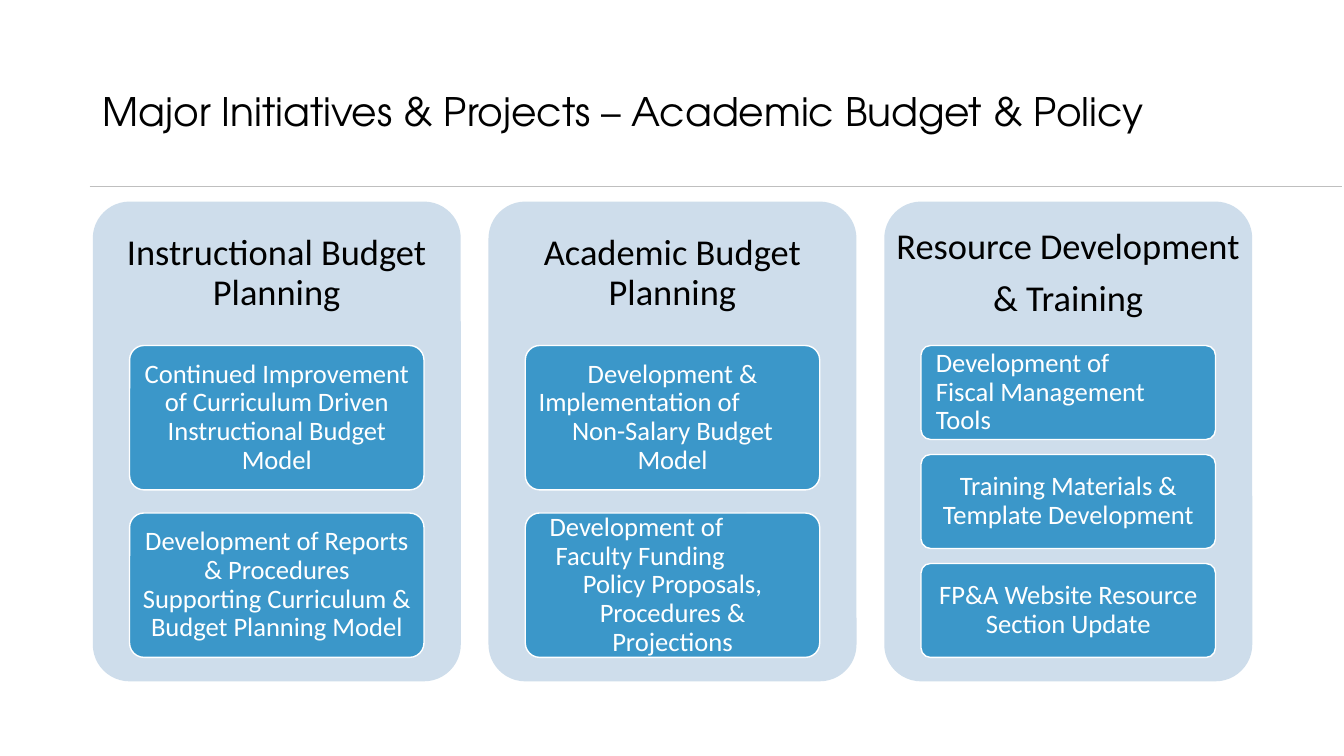
import pptx
import pptx.dml.color
import pptx.enum.shapes
import pptx.enum.text
import pptx.oxml
import pptx.util

Inches = pptx.util.Inches
Pt = pptx.util.Pt
RGBColor = pptx.dml.color.RGBColor
ALIGN = pptx.enum.text.PP_ALIGN
MIDDLE = pptx.enum.text.MSO_ANCHOR.MIDDLE

BLACK = RGBColor(0x00, 0x00, 0x00)
WHITE = RGBColor(0xFF, 0xFF, 0xFF)
RULE_GREY = RGBColor(0xBF, 0xBF, 0xBF)
PANEL_BLUE = RGBColor(0xCE, 0xDD, 0xEB)
CARD_BLUE = RGBColor(0x3B, 0x97, 0xC9)

TITLE = "Major Initiatives & Projects – Academic Budget & Policy"
COLUMNS = [
    (["Instructional Budget Planning"], [
        ["Continued Improvement of Curriculum Driven Instructional Budget Model"],
        ["Development of Reports & Procedures Supporting Curriculum & Budget Planning Model"],
    ]),
    (["Academic Budget Planning"], [
        ["Development &", ("Implementation of", 0), "Non-Salary Budget Model"],
        [("Development of", 0.11), ("Faculty Funding", 0.17),
         "Policy Proposals,", "Procedures & Projections"],
    ]),
    (["Resource Development", "& Training"], [
        [("Development of", 0.03), ("Fiscal Management Tools", 0.03)],
        ["Training Materials & Template Development"],
        ["FP&A Website Resource Section Update"],
    ]),
]


def format_para(para, size, font, color):
    """Set the line spacing and run format of one paragraph."""
    para.line_spacing = 0.9
    for span in para.runs:
        span.font.size = Pt(size)
        span.font.name = font
        span.font.color.rgb = color


def fill_text(frame, lines, size, color, inset, gap=0):
    """Write centred lines; a (text, indent) line is left-aligned instead."""
    frame.word_wrap = True
    frame.vertical_anchor = MIDDLE
    frame.margin_left = frame.margin_right = Inches(inset)
    frame.margin_top = frame.margin_bottom = Inches(inset)
    for index, line in enumerate(lines):
        para = frame.paragraphs[0] if index == 0 else frame.add_paragraph()
        if isinstance(line, tuple):
            para.text, indent = line
            para.alignment = ALIGN.LEFT
            para._p.get_or_add_pPr().set("marL", str(Inches(indent)))
        else:
            para.text = line
            para.alignment = ALIGN.CENTER
        if index:
            para.space_before = Pt(gap)
        format_para(para, size, "Calibri", color)


def add_rounded_box(page, left, top, width, height, color):
    """Add a filled rounded rectangle without an outline."""
    box = page.shapes.add_shape(
        pptx.enum.shapes.MSO_SHAPE.ROUNDED_RECTANGLE,
        Inches(left), Inches(top), Inches(width), Inches(height))
    box.adjustments[0] = 0.1
    box.shadow.inherit = False
    box.fill.solid()
    box.fill.fore_color.rgb = color
    box.line.fill.background()
    return box


def add_heading(page, left, top, width, height):
    """Place the title and the rule that runs to the right edge below it."""
    title = page.shapes.title
    title.left, title.top = Inches(left), Inches(top)
    title.width, title.height = Inches(width), Inches(height)
    frame = title.text_frame
    frame.text = TITLE
    frame.auto_size = pptx.enum.text.MSO_AUTO_SIZE.NONE
    frame.vertical_anchor = MIDDLE
    frame.paragraphs[0].alignment = ALIGN.LEFT
    format_para(frame.paragraphs[0], 28, "TeX Gyre Adventor", BLACK)

    bottom = Inches(top + height)
    rule = page.shapes.add_connector(
        pptx.enum.shapes.MSO_CONNECTOR.STRAIGHT,
        Inches(left - 0.03), bottom, Inches(13.31), bottom)
    rule.line.color.rgb = RULE_GREY
    rule.line.width = Pt(0.5)
    properties = rule._element.spPr
    properties.append(properties.makeelement(pptx.oxml.ns.qn("a:effectLst"), {}))


def add_cards(page, cards, left, top, width, height):
    """Stack equal cards with gaps in proportion to their height."""
    gap_ratio = 0.16
    card_height = height / (len(cards) + (len(cards) - 1) * gap_ratio)
    for index, lines in enumerate(cards):
        card_top = top + index * card_height * (1 + gap_ratio)
        card = add_rounded_box(page, left, card_top, width, card_height, CARD_BLUE)
        card.line.color.rgb = WHITE
        card.line.width = Pt(1)
        fill_text(card.text_frame, lines, 19, WHITE, 0.09)


def add_column(page, header, cards, left, top, width, height):
    """Draw a panel with its header above a stack of cards."""
    add_rounded_box(page, left, top, width, height, PANEL_BLUE)
    header_height = 0.3 * height
    box = page.shapes.add_textbox(
        Inches(left), Inches(top), Inches(width), Inches(header_height))
    fill_text(box.text_frame, header, 26, BLACK, 0.11, gap=9)
    add_cards(page, cards, left + 0.1 * width, top + header_height,
              0.8 * width, 0.65 * height)


def add_columns(page, left, top, width, height):
    """Spread the columns evenly over the box."""
    column_width = 3.65
    pitch = (width - column_width) / (len(COLUMNS) - 1)
    for index, (header, cards) in enumerate(COLUMNS):
        add_column(page, header, cards, left + index * pitch, top, column_width, height)


def main():
    """Build and save the deck."""
    deck = pptx.Presentation()
    deck.slide_width, deck.slide_height = Inches(13.33), Inches(7.5)
    page = deck.slides.add_slide(deck.slide_layouts.get_by_name("Title Only"))
    add_heading(page, 0.92, 0.4, 11.5, 1.45)
    add_columns(page, 0.92, 2, 11.5, 4.76)
    deck.save("out.pptx")


if __name__ == "__main__":
    main()
